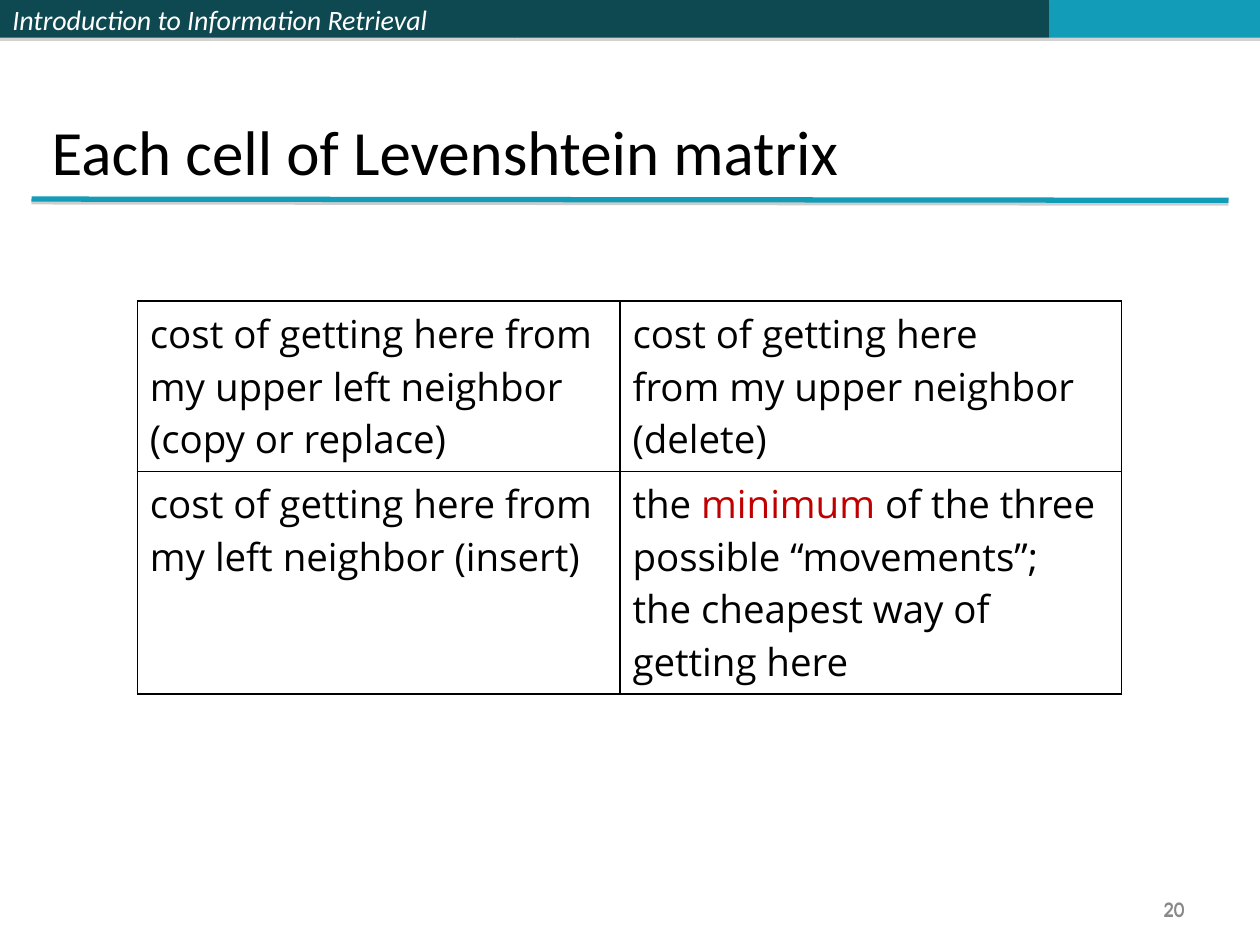
from dataclasses import dataclass

from lxml import etree
from pptx import Presentation
from pptx.dml.color import RGBColor
from pptx.enum.shapes import MSO_CONNECTOR, MSO_SHAPE
from pptx.enum.text import MSO_ANCHOR, PP_ALIGN
from pptx.oxml.ns import qn
from pptx.util import Inches, Pt

RECT, STRAIGHT = MSO_SHAPE.RECTANGLE, MSO_CONNECTOR.STRAIGHT
LEFT, RIGHT = PP_ALIGN.LEFT, PP_ALIGN.RIGHT
MIDDLE, BOTTOM = MSO_ANCHOR.MIDDLE, MSO_ANCHOR.BOTTOM
TITLE_ONLY = 5


@dataclass(frozen=True)
class Theme:
    dark: str = "0E4851"
    accent: str = "139CB7"
    white: str = "FFFFFF"
    text: str = "000000"
    highlight: str = "C00000"
    muted: str = "898989"
    shadow: str = "808080"
    head_font: str = "Calibri"
    table_font: str = "Open Sans"
    title_size: int = 36
    table_size: int = 22
    banner_size: int = 16
    number_size: int = 12


class SlideBuilder:
    def __init__(self, slide, theme):
        self.s, self.theme = slide, theme

    def style(self, r, size, color, font, italic=False):
        r.font.size, r.font.name, r.font.italic = Pt(size), font, italic
        r.font.color.rgb = RGBColor.from_string(color)

    def shadow(self, shape, opacity, distance):
        """Give a shape a hard shadow falling straight down."""
        effects = etree.SubElement(shape._element.spPr, qn("a:effectLst"))
        outer = etree.SubElement(effects, qn("a:outerShdw"), blurRad="0",
                                 dist=str(Pt(distance)), dir="5400000",
                                 algn="ctr", rotWithShape="0")
        color = etree.SubElement(outer, qn("a:srgbClr"), val=self.theme.shadow)
        etree.SubElement(color, qn("a:alpha"), val=str(opacity * 1000))

    def title(self, text, box):
        sp = self.s.shapes.title
        sp.left, sp.top, sp.width, sp.height = map(Inches, box)
        tf = sp.text_frame
        tf.text, tf.vertical_anchor = text, BOTTOM
        p = tf.paragraphs[0]
        p.alignment = LEFT
        self.style(p.runs[0], self.theme.title_size, self.theme.text,
                   self.theme.head_font)

    def bar(self, left, width, height, color, text=None):
        sp = self.s.shapes.add_shape(RECT, Inches(left), 0, Inches(width),
                                     Inches(height))
        sp.fill.solid()
        sp.fill.fore_color.rgb = RGBColor.from_string(color)
        sp.line.fill.background()
        self.shadow(sp, 35, 1.8)
        if text:
            tf = sp.text_frame
            tf.text, tf.vertical_anchor = text, MIDDLE
            p = tf.paragraphs[0]
            p.alignment = LEFT
            self.style(p.runs[0], self.theme.banner_size, self.theme.white,
                       self.theme.head_font, italic=True)

    def rule(self, x1, y1, x2, y2):
        line = self.s.shapes.add_connector(STRAIGHT, *map(Inches, (x1, y1, x2, y2)))
        line.line.color.rgb = RGBColor.from_string(self.theme.accent)
        line.line.width = Pt(3)
        self.shadow(line, 38, 1.6)

    def page_number(self, text, box):
        tf = self.s.shapes.add_textbox(*map(Inches, box)).text_frame
        tf.text, tf.word_wrap, tf.vertical_anchor = text, True, MIDDLE
        p = tf.paragraphs[0]
        p.alignment = RIGHT
        self.style(p.runs[0], self.theme.number_size, self.theme.muted,
                   self.theme.head_font)

    def table(self, rows, left, top, widths, heights):
        frame = self.s.shapes.add_table(
            len(heights), len(widths), Inches(left), Inches(top),
            Inches(sum(widths)), Inches(sum(heights)))
        table = frame.table
        table.first_row = table.horz_banding = False
        for column, width in zip(table.columns, widths):
            column.width = Inches(width)
        for row, height in zip(table.rows, heights):
            row.height = Inches(height)
        for i, row in enumerate(rows):
            for j, lines in enumerate(row):
                self.cell(table.cell(i, j), lines)

    def cell(self, cell, lines):
        """Fill a cell; every second piece of a line split at * is highlighted."""
        t, tf = self.theme, cell.text_frame
        for n, line in enumerate(lines):
            p = tf.add_paragraph() if n else tf.paragraphs[0]
            for k, piece in enumerate(line.split("*")):
                r = p.add_run()
                r.text = piece
                self.style(r, t.table_size, t.highlight if k % 2 else t.text,
                           t.table_font)
        tcPr = cell._tc.get_or_add_tcPr()
        for side in ("lnL", "lnR", "lnT", "lnB"):
            border = etree.SubElement(tcPr, qn(f"a:{side}"), w=str(Pt(1)))
            fill = etree.SubElement(border, qn("a:solidFill"))
            etree.SubElement(fill, qn("a:srgbClr"), val=t.text)
        cell.fill.solid()
        cell.fill.fore_color.rgb = RGBColor.from_string(t.white)


def main():
    prs = Presentation()
    prs.slide_width, prs.slide_height = Inches(10), Inches(7.5)
    theme = Theme()
    slide = SlideBuilder(prs.slides.add_slide(prs.slide_layouts[TITLE_ONLY]), theme)

    # Banner and title
    slide.bar(0, 4.08, 0.3, theme.dark, "Introduction to Information Retrieval")
    slide.bar(4.08, 4.25, 0.3, theme.dark)
    slide.bar(8.33, 1.67, 0.3, theme.accent)
    slide.rule(0.25, 1.58, 9.75, 1.59)
    slide.title("Each cell of Levenshtein matrix", (0.31, 0.01, 9.45, 1.53))

    # Page number, set twice with a slight offset
    for top, height in ((7.08, 0.27), (7.06, 0.3)):
        slide.page_number("20", (7.17, top, 2.33, height))

    # Meaning of the four entries in a matrix cell, rows tall enough for the text
    slide.table([
        [["cost of getting here from", "my upper left neighbor",
          "(copy or replace)"],
         ["cost of getting here", "from my upper neighbor", "(delete)"]],
        [["cost of getting here from", "my left neighbor (insert)"],
         ["the *minimum *of the three possible “movements”;",
          "the cheapest way of getting here"]],
    ], left=1.09, top=2.39, widths=(3.83, 3.98), heights=(1.35, 1.77))

    prs.save("out.pptx")


if __name__ == "__main__":
    main()
